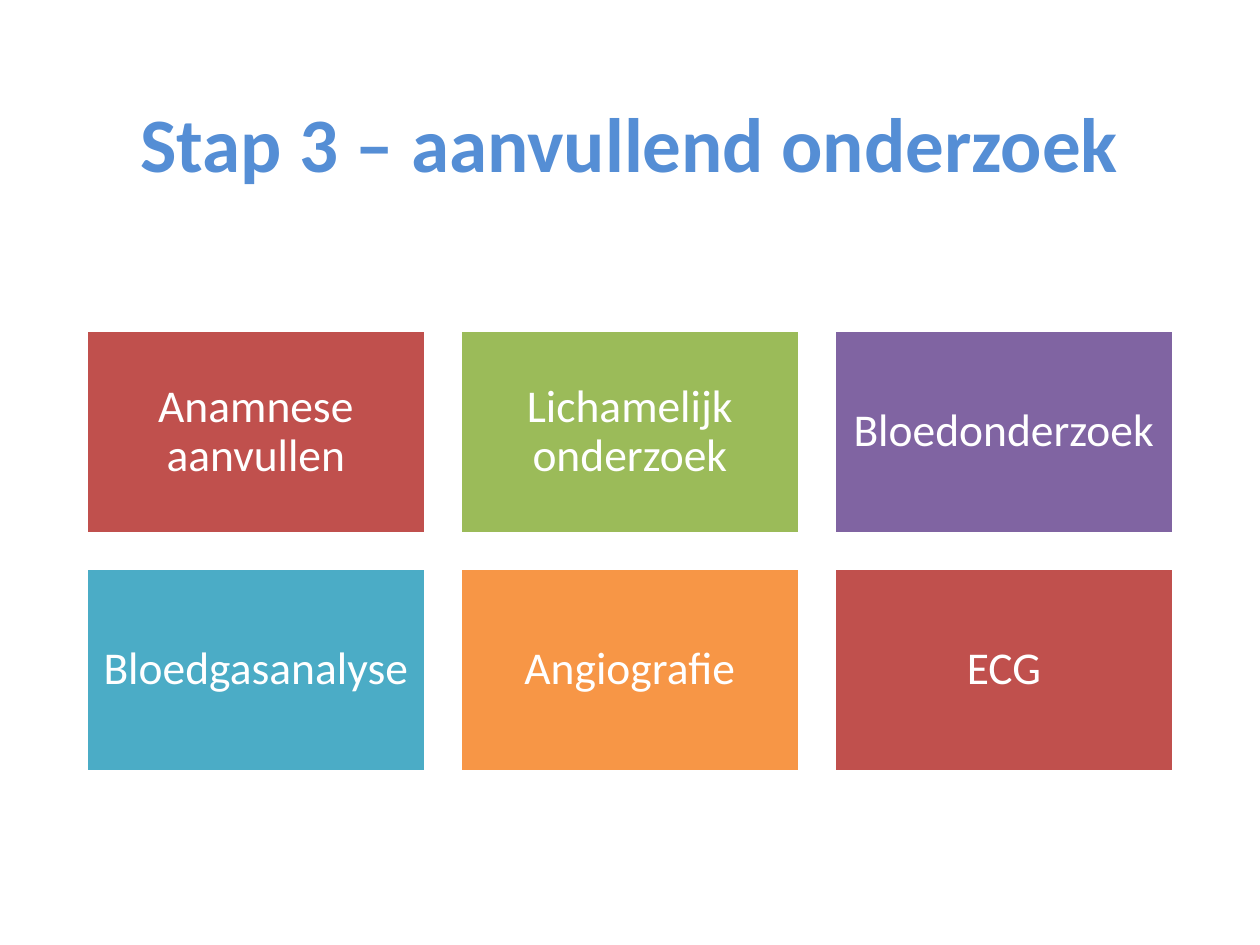
from dataclasses import dataclass

from pptx import Presentation
from pptx import util as u
from pptx.dml import color
from pptx.enum import shapes, text

SCALE = 914400 // 126


@dataclass(frozen=True)
class Theme:
    """Hold the colours and type sizes of the slide."""
    font: str = "Calibri"
    title_size: int = 44
    tile_size: int = 26
    title: str = "558ED5"
    white: str = "FFFFFF"
    red: str = "C0504D"
    green: str = "9BBB59"
    purple: str = "8064A2"
    teal: str = "4BACC6"
    orange: str = "F79646"


class Board:
    """Draw styled elements on the current slide."""

    def __init__(self, page, theme):
        """Keep the slide and its style."""
        self.page = page
        self.theme = theme

    def label(self, box, words, size, tint, bold=False, spacing=1.0, inset=13):
        """Fill a shape with one centred, formatted paragraph."""
        frame = box.text_frame
        frame_format = {
            "word_wrap": True,
            "auto_size": text.MSO_AUTO_SIZE.NONE,
            "vertical_anchor": text.MSO_ANCHOR.MIDDLE,
        }
        for side in ("left", "top", "right", "bottom"):
            frame_format[f"margin_{side}"] = inset * SCALE
        para = frame.paragraphs[0]
        span = para.add_run()
        span.text = words
        formats = (
            (frame, frame_format),
            (para, {"alignment": text.PP_ALIGN.CENTER, "line_spacing": spacing}),
            (span.font, {"name": self.theme.font, "size": u.Pt(size), "bold": bold}),
        )
        for target, values in formats:
            for name, value in values.items():
                setattr(target, name, value)
        span.font.color.rgb = color.RGBColor.from_string(tint)

    def title(self, words, left, top, width, height):
        """Place and format the title placeholder."""
        box = self.page.shapes.title
        bounds = {"left": left, "top": top, "width": width, "height": height}
        for name, value in bounds.items():
            setattr(box, name, value * SCALE)
        self.label(box, words, self.theme.title_size, self.theme.title, bold=True)

    def tile(self, words, fill, left, top, width, height):
        """Add a coloured rectangle with a centred label."""
        bounds = [value * SCALE for value in (left, top, width, height)]
        box = self.page.shapes.add_shape(shapes.MSO_SHAPE.RECTANGLE, *bounds)
        box.shadow.inherit = False
        box.fill.solid()
        box.fill.fore_color.rgb = color.RGBColor.from_string(fill)
        box.line.color.rgb = color.RGBColor.from_string(self.theme.white)
        box.line.width = u.Pt(2)
        self.label(box, words, self.theme.tile_size, self.theme.white, spacing=0.9)


def main():
    """Build and save the slide."""
    deck = Presentation()
    deck.slide_width, deck.slide_height = u.Inches(10), u.Inches(7.5)
    theme = Theme()
    board = Board(deck.slides.add_slide(deck.slide_layouts[5]), theme)
    board.title("Stap 3 – aanvullend onderzoek", 87, 50, 1086, 183)

    tiles = (
        ("Anamnese aanvullen", theme.red),
        ("Lichamelijk onderzoek", theme.green),
        ("Bloedonderzoek", theme.purple),
        ("Bloedgasanalyse", theme.teal),
        ("Angiografie", theme.orange),
        ("ECG", theme.red),
    )
    left, top, width, height, gap, columns = 86, 330, 340, 204, 34, 3
    for index, (words, fill) in enumerate(tiles):
        row, column = divmod(index, columns)
        board.tile(words, fill, left + column * (width + gap),
                   top + row * (height + gap), width, height)
    deck.save("out.pptx")


if __name__ == "__main__":
    main()
